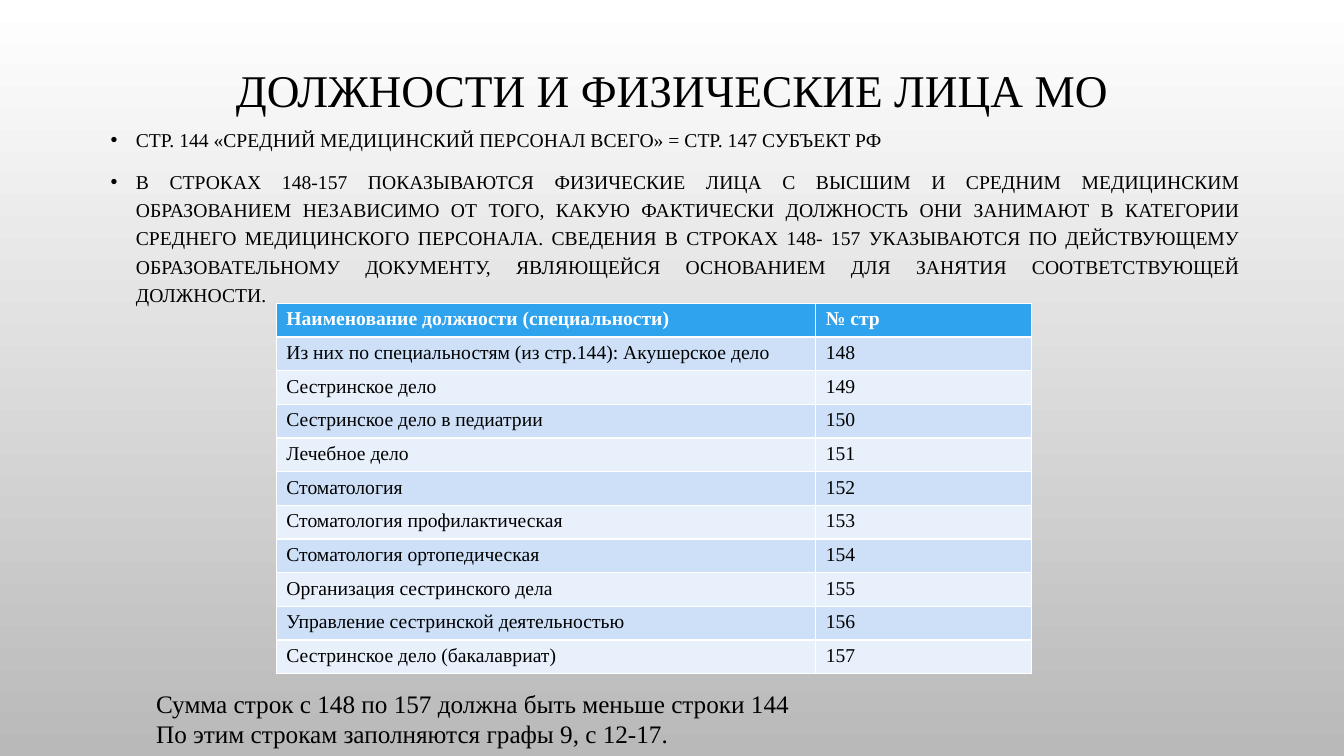
from dataclasses import dataclass

from lxml.etree import SubElement
from pptx import Presentation
from pptx.dml.color import RGBColor as Rgb
from pptx.enum.text import MSO_ANCHOR as Anchor, MSO_AUTO_SIZE as AutoSize, PP_ALIGN as Align
from pptx.oxml.ns import qn
from pptx.util import Inches, Pt

HEADING = "ДОЛЖНОСТИ И ФИЗИЧЕСКИЕ ЛИЦА МО"
RULES = [
    ("СТР. 144 «СРЕДНИЙ МЕДИЦИНСКИЙ ПЕРСОНАЛ ВСЕГО» = СТР. 147 СУБЪЕКТ РФ", Align.LEFT),
    ("В СТРОКАХ 148-157 ПОКАЗЫВАЮТСЯ ФИЗИЧЕСКИЕ ЛИЦА С ВЫСШИМ И СРЕДНИМ МЕДИЦИНСКИМ "
     "ОБРАЗОВАНИЕМ НЕЗАВИСИМО ОТ ТОГО, КАКУЮ ФАКТИЧЕСКИ ДОЛЖНОСТЬ ОНИ ЗАНИМАЮТ В КАТЕГОРИИ "
     "СРЕДНЕГО МЕДИЦИНСКОГО ПЕРСОНАЛА. СВЕДЕНИЯ В СТРОКАХ 148- 157 УКАЗЫВАЮТСЯ ПО "
     "ДЕЙСТВУЮЩЕМУ ОБРАЗОВАТЕЛЬНОМУ ДОКУМЕНТУ, ЯВЛЯЮЩЕЙСЯ ОСНОВАНИЕМ ДЛЯ ЗАНЯТИЯ "
     "СООТВЕТСТВУЮЩЕЙ ДОЛЖНОСТИ.", Align.JUSTIFY),
]
COLUMN_HEADS = ("Наименование должности (специальности)", "№ стр")
FIRST_LINE_NUMBER = 148
SPECIALTIES = [
    "Из них по специальностям (из стр.144): Акушерское дело",
    "Сестринское дело",
    "Сестринское дело в педиатрии",
    "Лечебное дело",
    "Стоматология",
    "Стоматология профилактическая",
    "Стоматология ортопедическая",
    "Организация сестринского дела",
    "Управление сестринской деятельностью",
    "Сестринское дело (бакалавриат)",
]
CHECKS = [
    "Сумма строк с 148 по 157 должна быть меньше строки 144",
    "По этим строкам заполняются графы 9, с 12-17.",
]


@dataclass(frozen=True)
class Theme:
    font: str = "Times New Roman"
    ink: str = "000000"
    head_ink: str = "FFFFFF"
    head_fill: str = "2FA3EE"
    bands: tuple = ("CDE0F8", "E8F0FC")
    backdrop: tuple = ("FFFFFF", "B9B9B9")
    heading_size: float = 32.4
    body_size: int = 14
    check_size: int = 18


THEME = Theme()
SLIDE_SIZE = (13.33, 7.5)
HEADING_BOX = (1, 0.68, 11.33, 0.49)
RULES_BOX = (1, 1.17, 11.4, 5.35)
TABLE_CORNER = (2.74, 3.01)
COLUMN_WIDTHS = (5.35, 2.14)
ROW_HEIGHT = 0.3
CHECKS_BOX = (1.45, 6.78, 9.94, 0.71)
BULLET_INDENT = Inches(0.25)


def apply(target, **values):
    for key, value in values.items():
        setattr(target, key, value)


def place(shape, box):
    apply(shape, **dict(zip(("left", "top", "width", "height"), map(Inches, box))))


def write(paragraph, text, size, ink=THEME.ink, bold=False, **layout):
    run = paragraph.add_run()
    run.text = text
    apply(run.font, name=THEME.font, size=Pt(size), bold=bold)
    run.font.color.rgb = Rgb.from_string(ink)
    apply(paragraph, **layout)


def add_bullet(paragraph):
    props = paragraph._p.get_or_add_pPr()
    props.set("marL", str(BULLET_INDENT))
    props.set("indent", str(-BULLET_INDENT))
    color = SubElement(props, qn("a:buClr"))
    SubElement(color, qn("a:srgbClr"), val=THEME.ink)
    SubElement(props, qn("a:buFont"), typeface="Arial")
    SubElement(props, qn("a:buChar"), char="•")


def add_text(slide, box):
    shape = slide.shapes.add_textbox(*map(Inches, box))
    shape.text_frame.word_wrap = True
    return shape.text_frame


def paragraphs(frame, texts):
    for index, text in enumerate(texts):
        yield index, frame.add_paragraph() if index else frame.paragraphs[0], text


def add_backdrop(slide):
    fill = slide.background.fill
    fill.gradient()
    fill.gradient_angle = 270
    for position, (stop, color) in enumerate(zip(fill.gradient_stops, THEME.backdrop)):
        stop.position = position
        stop.color.rgb = Rgb.from_string(color)


def add_heading(slide):
    heading = slide.shapes.title
    place(heading, HEADING_BOX)
    apply(heading.text_frame, word_wrap=True, auto_size=AutoSize.NONE,
          vertical_anchor=Anchor.MIDDLE)
    write(heading.text_frame.paragraphs[0], HEADING, THEME.heading_size,
          alignment=Align.CENTER, line_spacing=0.9)


def add_rules(slide):
    frame = add_text(slide, RULES_BOX)
    for index, paragraph, (text, align) in paragraphs(frame, RULES):
        add_bullet(paragraph)
        write(paragraph, text, THEME.body_size, alignment=align, line_spacing=1.2,
              space_before=Pt(10 if index else 0))


def add_specialties(slide):
    rows = [COLUMN_HEADS] + [
        (name, str(number)) for number, name in enumerate(SPECIALTIES, FIRST_LINE_NUMBER)]
    size = (sum(COLUMN_WIDTHS), ROW_HEIGHT * len(rows))
    table = slide.shapes.add_table(
        len(rows), len(COLUMN_HEADS), *map(Inches, TABLE_CORNER + size)).table
    for column, width in zip(table.columns, COLUMN_WIDTHS):
        column.width = Inches(width)
    for index, values in enumerate(rows):
        is_head = index == 0
        fill = THEME.head_fill if is_head else THEME.bands[(index - 1) % 2]
        ink = THEME.head_ink if is_head else THEME.ink
        for cell, text in zip(table.rows[index].cells, values):
            cell.fill.solid()
            cell.fill.fore_color.rgb = Rgb.from_string(fill)
            write(cell.text_frame.paragraphs[0], text, THEME.body_size, ink, is_head)


def add_checks(slide):
    frame = add_text(slide, CHECKS_BOX)
    for _, paragraph, text in paragraphs(frame, CHECKS):
        write(paragraph, text, THEME.check_size)


def main():
    deck = Presentation()
    deck.slide_width, deck.slide_height = map(Inches, SLIDE_SIZE)
    slide = deck.slides.add_slide(deck.slide_layouts[5])
    for add_part in (add_backdrop, add_heading, add_rules, add_specialties, add_checks):
        add_part(slide)
    deck.save("out.pptx")


if __name__ == "__main__":
    main()
